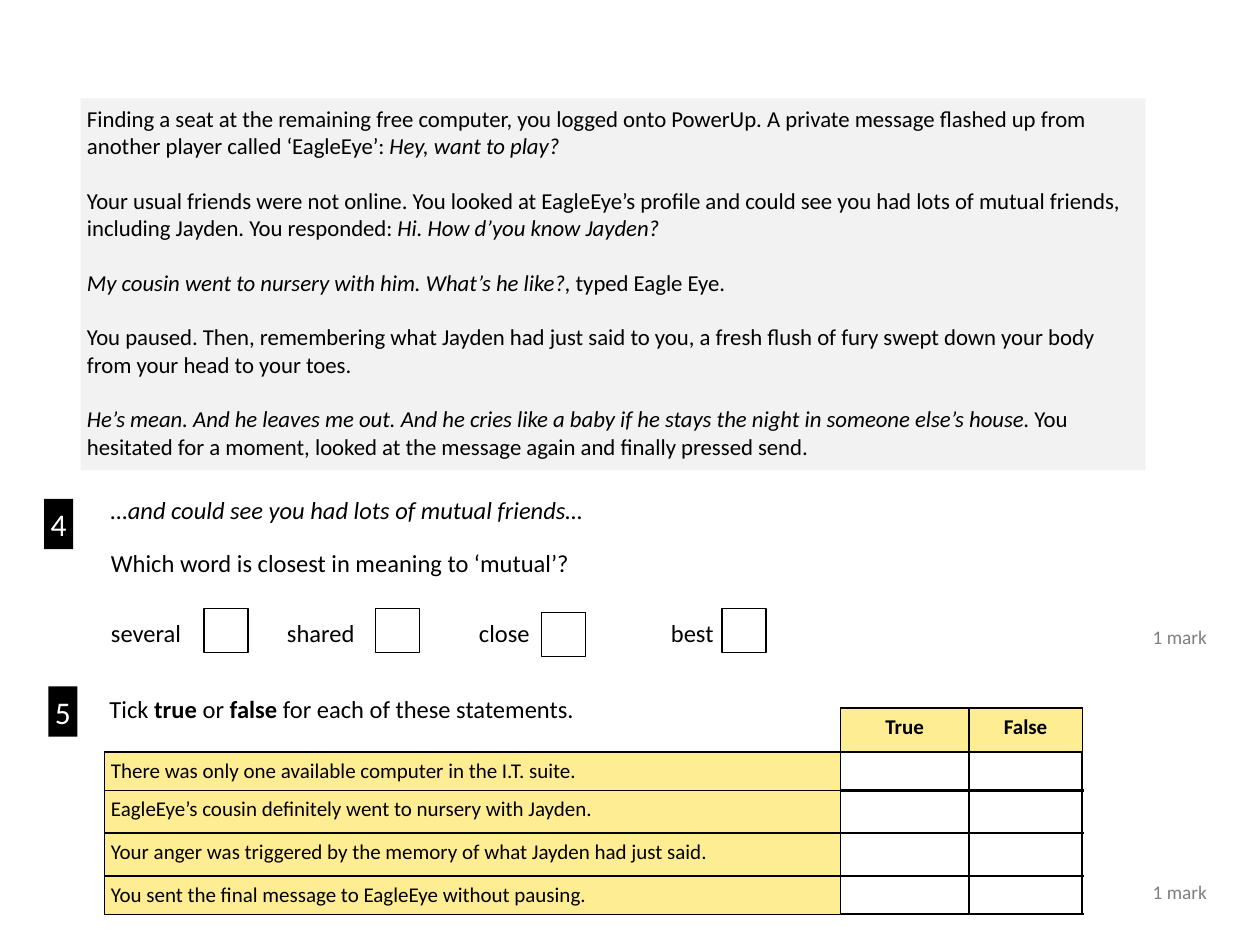
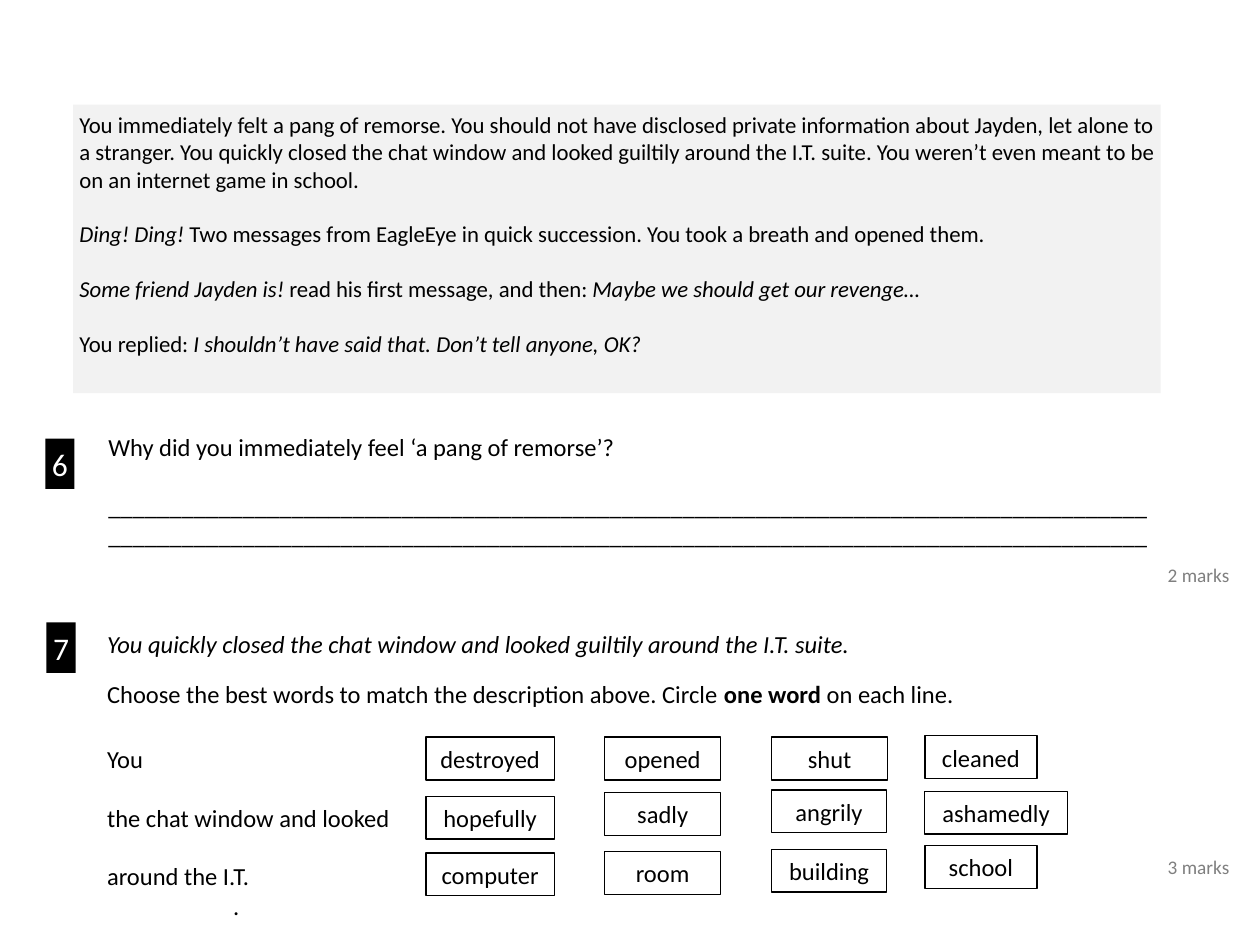
from dataclasses import dataclass

from lxml import etree
from pptx import Presentation
from pptx.dml.color import RGBColor
from pptx.enum import shapes, text
from pptx.oxml import ns
from pptx.util import Pt


@dataclass(frozen=True)
class Theme:
    font: str = "Calibri"
    ink: str = "000000"
    paper: str = "FFFFFF"
    passage: str = "F2F2F2"
    table: str = "FFED93"
    mark: str = "7F7F7F"
    passage_size: float = 13
    question_size: float = 14
    table_size: float = 12
    badge_size: float = 18
    mark_size: float = 11
    inset: float = 3.6
    thin: float = 0.75


THEME = Theme()
LEFT, CENTRE = text.PP_ALIGN.LEFT, text.PP_ALIGN.CENTER

# A span is plain text or (style, text); a paragraph is (space before, spans).
GAP = 15.6
PAGES = [
    {
        "passage": ((46.1, 56.2, 608.4, 212.4), [
            (0, ["Finding a seat at the remaining free computer, you logged onto PowerUp. "
                 "A private message flashed up from another player called ‘EagleEye’: ",
                 ("i", "Hey, want to play?")]),
            (GAP, ["Your usual friends were not online. You looked at EagleEye’s profile and could "
                   "see you had lots of mutual friends, including Jayden. You responded: ",
                   ("i", "Hi. How d’you know Jayden?")]),
            (GAP, [("i", "My cousin went to nursery with him. What’s he like?, "), "typed Eagle Eye."]),
            (GAP, ["You paused. Then, remembering what Jayden had just said to you, a fresh flush of "
                   "fury swept down your body from your head to your toes."]),
            (GAP, [("i", "He’s mean. And he leaves me out. And he cries like a baby if he stays the "
                         "night in someone else’s house. "),
                   "You hesitated for a moment, looked at the message again and finally pressed send."]),
        ]),
        "badges": [("4", 25.2, 285.1), ("5", 27.6, 392.2)],
        "questions": [
            ((59.8, 279.4, 643.7, 118.8), [
                (0, [("i", "…and could see you had lots of mutual friends…")]),
                (13.4, ["Which word is closest in meaning to ‘mutual’?"]),
                (23.3, ["several\tshared\tclose\tbest"]),
            ], (100.6, 210.3, 320)),
            ((59, 393.1, 643.7, 24.5), [
                (0, ["Tick ", ("b", "true"), " or ", ("b", "false"), " for each of these statements."]),
            ], ()),
        ],
        "marks": [("1 mark", 651.6, 353.5), ("1 mark", 651.6, 499.7)],
    },
    {
        "passage": ((41.8, 59.8, 621.4, 164.9), [
            (0, ["You immediately felt a pang of remorse. You should not have disclosed private "
                 "information about Jayden, let alone to a stranger. You quickly closed the chat "
                 "window and looked guiltily around the I.T. suite. You weren’t even meant to be "
                 "on an internet game in school."]),
            (GAP, [("i", "Ding! Ding! "),
                   "Two messages from EagleEye in quick succession. You took a breath and opened them."]),
            (GAP, [("i", "Some friend Jayden is! "), "read his first message, and then: ",
                   ("i", "Maybe we should get our revenge…")]),
            (GAP, ["You replied: ", ("i", "I shouldn’t have said that. Don’t tell anyone, OK?")]),
        ]),
        "badges": [("6", 25.9, 250.6), ("7", 26.6, 355.7)],
        "questions": [
            ((58.3, 243.4, 655.2, 108.7), [
                (0, ["Why did you immediately feel ‘a pang of remorse’?"]),
                (16.6, ["_" * 85]),
                (0, ["_" * 85]),
            ], ()),
            ((57.6, 355.7, 655.9, 177.8), [
                (0, [("i", "You quickly closed the chat window and looked guiltily around the I.T. suite.")]),
                (12.2, ["Choose the best words to match the description above. Circle",
                        ("b", " one word "), "on each line."]),
                (20.2, ["You"]),
                (16.6, ["the chat window and looked"]),
                (16.6, ["around the I.T."]),
                (0, ["\t."]),
            ], (72,)),
        ],
        "marks": [("2 marks", 660.2, 318.2), ("3 marks", 660.2, 485.3)],
    },
]

TICK_SIDE = 25.2
TICK_BOXES = [(116.6, 347.8), (214.6, 347.8), (309.6, 349.9), (412.6, 347.8)]

TABLE_AT = (59.8, 404.6)
COLUMN_WIDTHS = [420.5, 73.4, 64.8]
ROW_HEIGHTS = [25.2, 21.6, 24.5, 24.5, 20.9]
STATEMENTS = [
    ["", "True", "False"],
    ["There was only one available computer in the I.T. suite.", "", ""],
    ["EagleEye’s cousin definitely went to nursery with Jayden.", "", ""],
    ["Your anger was triggered by the memory of what Jayden had just said.", "", ""],
    ["You sent the final message to EagleEye without pausing.", "", ""],
]

WORD_HEIGHT = 24.5
WORD_COLUMNS = [  # left, then (word, top, width) down the column
    (243.4, [("destroyed", 421.2, 73.4), ("hopefully", 455, 73.4), ("computer", 487.4, 73.4)]),
    (345.6, [("opened", 421.2, 66.2), ("sadly", 452.9, 66.2), ("room", 486.7, 66.2)]),
    (441, [("shut", 421.2, 66.2), ("angrily", 451.4, 65.5), ("building", 485.3, 65.5)]),
    (528.5, [("cleaned", 420.5, 64.1), ("ashamedly", 452.2, 81.4), ("school", 483.1, 64.1)]),
]


def rgb(colour):
    return RGBColor.from_string(colour)


def write(frame, paras, size, colour=THEME.ink, align=LEFT, tabs=()):
    for index, (gap, spans) in enumerate(paras):
        para = frame.paragraphs[0] if index == 0 else frame.add_paragraph()
        para.alignment = align
        para.space_before = Pt(gap)
        if tabs:
            stops = etree.SubElement(para._p.get_or_add_pPr(), ns.qn("a:tabLst"))
            for stop in tabs:
                etree.SubElement(stops, ns.qn("a:tab"), pos=str(int(Pt(stop))), algn="l")
        for part in spans:
            style, words = ("", part) if isinstance(part, str) else part
            span = para.add_run()
            span.text = words
            span.font.name, span.font.size = THEME.font, Pt(size)
            span.font.color.rgb = rgb(colour)
            span.font.bold, span.font.italic = style == "b", style == "i"


def set_margins(holder, side=THEME.inset):
    holder.margin_left = holder.margin_right = Pt(side)
    holder.margin_top = holder.margin_bottom = Pt(THEME.inset)


def add_text(page, place, paras, size, colour=THEME.ink, side=THEME.inset, tabs=()):
    frame = page.shapes.add_textbox(*map(Pt, place)).text_frame
    frame.word_wrap = True
    set_margins(frame, side)
    write(frame, paras, size, colour, tabs=tabs)


def add_rectangle(page, place, fill=None, outlined=False):
    box = page.shapes.add_shape(shapes.MSO_SHAPE.RECTANGLE, *map(Pt, place))
    box.shadow.inherit = False
    if fill:
        box.fill.solid()
        box.fill.fore_color.rgb = rgb(fill)
    else:
        box.fill.background()
    if outlined:
        box.line.color.rgb = rgb(THEME.ink)
        box.line.width = Pt(THEME.thin)
    else:
        box.line.fill.background()
    frame = box.text_frame
    frame.word_wrap = True
    frame.vertical_anchor = text.MSO_ANCHOR.TOP
    set_margins(frame)
    return box


def add_badge(page, number, left, top):
    frame = add_rectangle(page, (left, top, 16.6, 28.8), THEME.ink).text_frame
    frame.word_wrap = False
    write(frame, [(0, [number])], THEME.badge_size, THEME.paper, CENTRE)


def add_exercise(deck, content, add_answers):
    """Add a page; its answer fields go beneath the question text."""
    page = deck.slides.add_slide(deck.slide_layouts[6])
    place, paras = content["passage"]
    write(add_rectangle(page, place, THEME.passage).text_frame, paras, THEME.passage_size)
    add_answers(page)
    for badge in content["badges"]:
        add_badge(page, *badge)
    for place, paras, tabs in content["questions"]:
        add_text(page, place, paras, THEME.question_size, tabs=tabs)
    for words, left, top in content["marks"]:
        width = 49 if words == "1 mark" else 53.3
        add_text(page, (left, top, width, 20.9), [(0, [words])], THEME.mark_size, THEME.mark, side=7.2)


def set_borders(cell, borders):
    """Draw the sides L, R, T, B of a cell, each given as (colour, width)."""
    properties = cell._tc.get_or_add_tcPr()
    for index, side in enumerate("LRTB"):
        colour, width = borders[side]
        line = etree.Element(ns.qn(f"a:ln{side}"), w=str(int(Pt(width))))
        fill = etree.SubElement(line, ns.qn("a:solidFill"))
        etree.SubElement(fill, ns.qn("a:srgbClr"), val=colour)
        properties.insert(index, line)


def cell_borders(row, column):
    borders = dict.fromkeys("LRTB", (THEME.ink, 1))
    if row == column == 0:
        borders["L"] = borders["T"] = (THEME.paper, 1.5)
    elif row and column:
        borders["R"] = borders["B"] = (THEME.ink, 1.5)
        borders["L"] = (THEME.ink, 1 if column == 1 else 1.5)
        borders["T"] = (THEME.ink, 1 if row == 1 else 1.5)
    return borders


def add_true_false_table(page):
    size = (sum(COLUMN_WIDTHS), sum(ROW_HEIGHTS))
    table = page.shapes.add_table(len(ROW_HEIGHTS), len(COLUMN_WIDTHS), *map(Pt, TABLE_AT + size)).table
    for column, width in zip(table.columns, COLUMN_WIDTHS):
        column.width = Pt(width)
    for row, height in zip(table.rows, ROW_HEIGHTS):
        row.height = Pt(height)
    for row, entries in enumerate(STATEMENTS):
        for column, words in enumerate(entries):
            cell = table.cell(row, column)
            set_margins(cell)
            if words:
                cell.fill.solid()
                cell.fill.fore_color.rgb = rgb(THEME.table)
                span = ("b", words) if row == 0 else words
                write(cell.text_frame, [(0, [span])], THEME.table_size,
                      align=LEFT if row else CENTRE)
            else:
                cell.fill.background()
                etree.SubElement(cell.text_frame.paragraphs[0]._p, ns.qn("a:endParaRPr"),
                                 sz=str(int(THEME.table_size * 100)))
            set_borders(cell, cell_borders(row, column))


def add_tick_answers(page):
    for left, top in TICK_BOXES:
        add_rectangle(page, (left, top, TICK_SIDE, TICK_SIDE), outlined=True)
    add_true_false_table(page)


def add_word_choices(page):
    for left, choices in WORD_COLUMNS:
        for word, top, width in choices:
            frame = add_rectangle(page, (left, top, width, WORD_HEIGHT), THEME.paper, True).text_frame
            frame.vertical_anchor = text.MSO_ANCHOR.MIDDLE
            write(frame, [(0, [word])], THEME.question_size, align=CENTRE)


def main():
    deck = Presentation()
    deck.slide_width, deck.slide_height = Pt(720), Pt(540)
    for content, add_answers in zip(PAGES, (add_tick_answers, add_word_choices)):
        add_exercise(deck, content, add_answers)
    deck.save("out.pptx")


if __name__ == "__main__":
    main()
